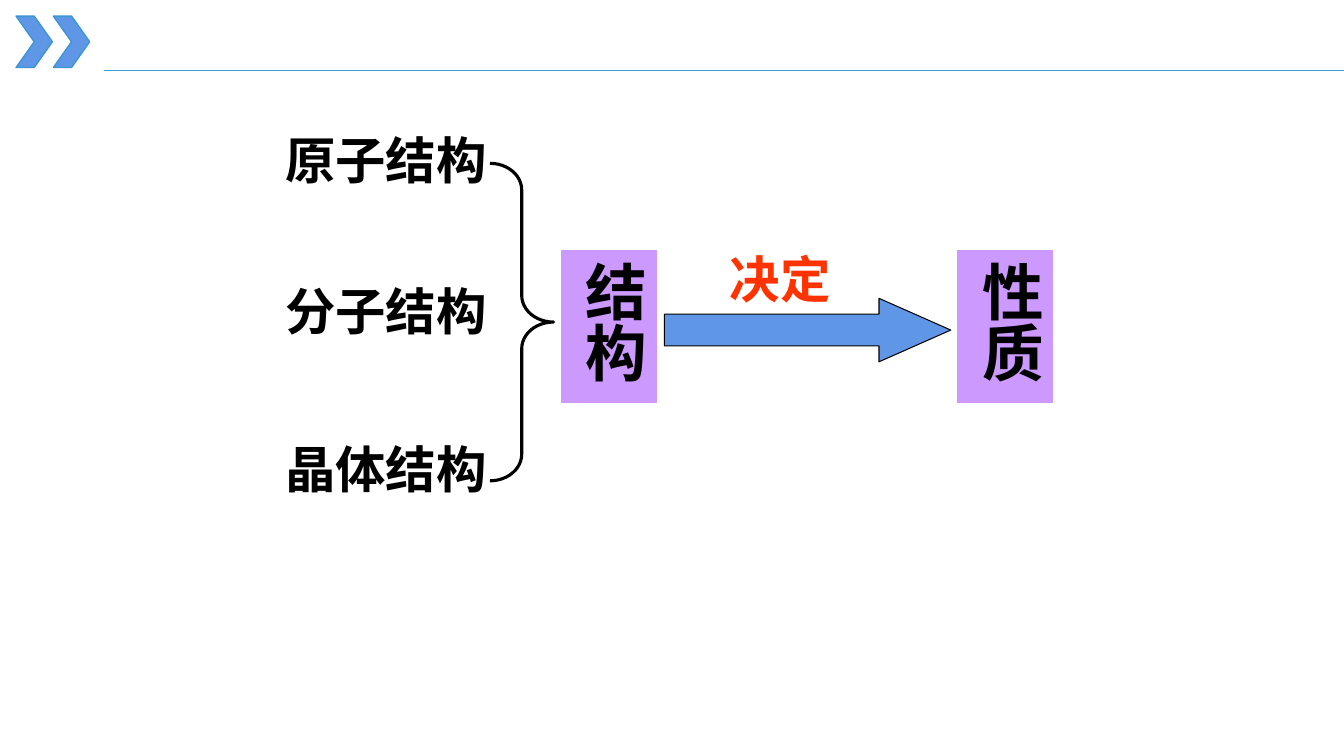
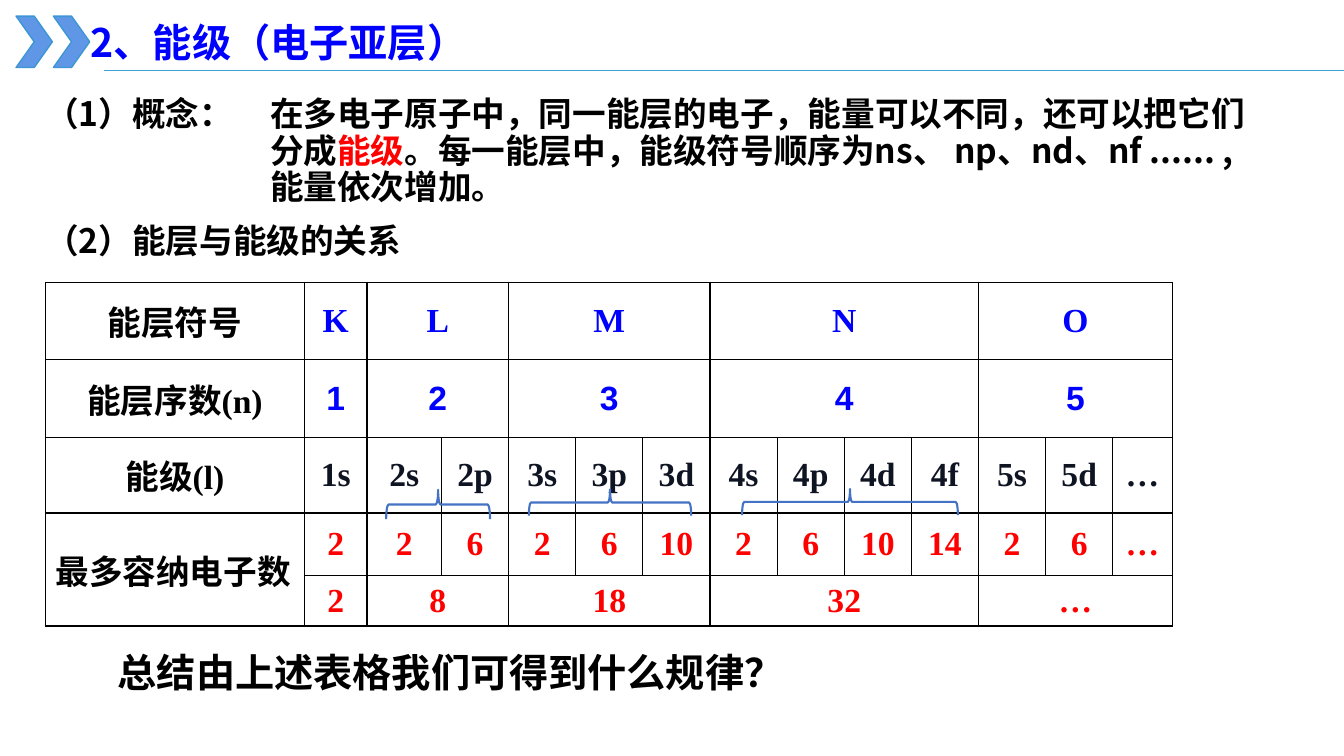
from dataclasses import dataclass

from lxml.etree import SubElement
from pptx import Presentation
from pptx.dml.color import RGBColor
from pptx.enum.shapes import MSO_CONNECTOR, MSO_SHAPE
from pptx.enum.text import MSO_ANCHOR, MSO_AUTO_SIZE, PP_ALIGN
from pptx.oxml.ns import qn
from pptx.util import Inches, Pt


@dataclass(frozen=True)
class Theme:
    black: str = "000000"
    blue: str = "0000FF"
    red: str = "FF0000"
    orange: str = "FF3300"
    navy: str = "0F1423"
    purple: str = "CC99FF"
    arrow: str = "6096E6"
    edge: str = "3B96D3"
    rule: str = "3DA1D2"
    brace: str = "4472C4"
    sans: str = "Arial"
    serif: str = "Times New Roman"
    hans: str = "Noto Sans CJK SC"
    kanji: str = "Noto Sans CJK JP"
    body: int = 24
    title: int = 28
    label: int = 36
    node: int = 44


THEME = Theme()


def rgb(color):
    return RGBColor.from_string(color)


def write(frame, content, size=THEME.body, color=THEME.black, face=THEME.hans,
          align=PP_ALIGN.LEFT, spacing=None):
    lines = [content] if isinstance(content, str) else content
    for index, line in enumerate(lines):
        para = frame.paragraphs[0] if index == 0 else frame.add_paragraph()
        para.alignment = align
        if spacing:
            para.line_spacing = spacing
        parts = [(line, {})] if isinstance(line, str) else line
        for words, style in parts:
            run = para.add_run()
            run.text = words
            font = run.font
            font.size = Pt(size)
            font.bold = True
            font.name = style.get("face", face)
            font.color.rgb = rgb(style.get("color", color))
            east = THEME.kanji if face == THEME.kanji else THEME.hans
            SubElement(font._element, qn("a:ea"), typeface=east)


def fit(frame, wrap=True):
    frame.word_wrap = wrap
    frame.vertical_anchor = MSO_ANCHOR.TOP
    frame.auto_size = MSO_AUTO_SIZE.SHAPE_TO_FIT_TEXT


def add_text(slide, box, content, wrap=True, **style):
    frame = slide.shapes.add_textbox(*map(Inches, box)).text_frame
    fit(frame, wrap)
    write(frame, content, **style)


def add_shape(slide, kind, box, line, width, fill=None, turn=0, adjust=()):
    shape = slide.shapes.add_shape(kind, *map(Inches, box))
    shape.shadow.inherit = False
    shape.rotation = turn
    for index, value in enumerate(adjust):
        shape.adjustments[index] = value
    if fill:
        shape.fill.solid()
        shape.fill.fore_color.rgb = rgb(fill)
    else:
        shape.fill.background()
    shape.line.color.rgb = rgb(line)
    shape.line.width = Pt(width)
    return shape


def add_node(slide, left, words):
    node = add_shape(slide, MSO_SHAPE.RECTANGLE, (left, 2.49, 0.94, 1.5),
                     THEME.purple, 0.75, fill=THEME.purple)
    frame = node.text_frame
    fit(frame)
    frame._txBody.bodyPr.set("vert", "eaVert")
    write(frame, words, size=THEME.node, face=THEME.sans)


def add_rule(slide):
    rule = slide.shapes.add_connector(
        MSO_CONNECTOR.STRAIGHT, Inches(1.03), Inches(0.7), Inches(13.33), Inches(0.7))
    rule.line.color.rgb = rgb(THEME.rule)
    rule.line.width = Pt(0.5)
    SubElement(rule._element.spPr, qn("a:effectLst"))
    return rule


def set_layout(layout, slide):
    for holder in list(layout.placeholders):
        if holder.placeholder_format.idx:
            holder._element.getparent().remove(holder._element)
        else:
            holder.left, holder.top = Inches(0.8), Inches(0.13)
            holder.width, holder.height = Inches(4.38), Inches(0.57)
    marks = [add_shape(slide, MSO_SHAPE.CHEVRON, (left, 0.16, 0.36, 0.51),
                       THEME.edge, 1, fill=THEME.arrow) for left in (0.16, 0.53)]
    for mark in marks + [add_rule(slide)]:
        layout.shapes._spTree.append(mark._element)


def set_cell(cell):
    props = cell._tc.get_or_add_tcPr()
    for side in ("lnL", "lnR", "lnT", "lnB"):
        line = SubElement(props, qn(f"a:{side}"), w=str(Pt(1)))
        fill = SubElement(line, qn("a:solidFill"))
        SubElement(fill, qn("a:srgbClr"), val=THEME.black)
    cell.fill.background()
    cell.vertical_anchor = MSO_ANCHOR.MIDDLE


def add_grid(slide):
    total, first, last = 11.18, [2.57, 0.62, 0.74], [0.59]
    widths = first + [(total - sum(first + last)) / 10] * 10 + last
    heights = [0.77, 0.77, 0.75, 0.62, 0.5]
    spans = [1, 2, 3, 4, 3]
    starts = [1 + sum(spans[:index]) for index in range(len(spans))]
    singles = range(1, len(widths))
    rows = [
        ("能层符号", "K L M N O", starts, THEME.blue, THEME.serif),
        ([[("能层序数", {"face": THEME.sans}), ("(n)", {})]],
         "1 2 3 4 5", starts, THEME.blue, THEME.sans),
        ("能级(l)", "1s 2s 2p 3s 3p 3d 4s 4p 4d 4f 5s 5d …", singles,
         THEME.navy, THEME.serif),
        ("最多容纳电子数", "2 2 6 2 6 10 2 6 10 14 2 6 …", singles,
         THEME.red, THEME.serif),
        (None, "2 8 18 32 …", starts, THEME.red, THEME.serif),
    ]
    table = slide.shapes.add_table(
        len(heights), len(widths), Inches(0.45), Inches(2.8),
        Inches(total), Inches(sum(heights))).table
    table.first_row = table.horz_banding = False
    for column, width in zip(table.columns, widths):
        column.width = Inches(width)
    for row, height in zip(table.rows, heights):
        row.height = Inches(height)
    for cell in table.iter_cells():
        set_cell(cell)
    table.cell(3, 0).merge(table.cell(4, 0))
    for index, (head, values, places, color, face) in enumerate(rows):
        if head:
            align = PP_ALIGN.LEFT if index == 3 else PP_ALIGN.CENTER
            write(table.cell(index, 0).text_frame, head, face=THEME.serif, align=align)
        if places is starts:
            for start, span in zip(starts, spans):
                if span > 1:
                    table.cell(index, start).merge(table.cell(index, start + span - 1))
        for place, value in zip(places, values.split()):
            write(table.cell(index, place).text_frame, value, color=color,
                  face=face, align=PP_ALIGN.CENTER)


def draw_cause(slide):
    for top, words in ((1.23, "原子结构"), (2.73, "分子结构"), (4.3, "晶体结构")):
        add_text(slide, (2.73, top, 2.6, 0.7), words, size=THEME.label, face=THEME.sans)
    add_shape(slide, MSO_SHAPE.RIGHT_BRACE, (4.86, 1.62, 0.63, 3.15),
              THEME.black, 2.25, adjust=(0.42, 0.5))
    add_node(slide, 5.57, "结构")
    add_node(slide, 9.5, "性质")
    add_shape(slide, MSO_SHAPE.RIGHT_ARROW, (6.59, 2.96, 2.84, 0.63),
              THEME.black, 0.75, fill=THEME.arrow, adjust=(0.5, 1.13))
    add_text(slide, (7.14, 2.41, 1.34, 0.7), "决定", size=THEME.label,
             color=THEME.orange, face=THEME.sans)


def draw_levels(slide):
    frame = slide.shapes.title.text_frame
    fit(frame)
    write(frame, "2、能级（电子亚层）", size=THEME.title, color=THEME.blue)
    add_text(slide, (2.58, 0.92, 10.75, 1.19), [
        "在多电子原子中，同一能层的电子，能量可以不同，还可以把它们",
        [("分成", {}), ("能级", {"color": THEME.red}),
         ("。每一能层中，能级符号顺序为ns、 np、nd、nf ...... ,", {})],
        "能量依次增加。",
    ], spacing=0.9)
    for top, width, words in ((0.87, 2.23, "（1）概念："),
                              (2.13, 3.93, "（2）能层与能级的关系")):
        add_text(slide, (0.35, top, width, 0.51), words, wrap=False)
    add_grid(slide)
    for box in ((4.2, 4.49, 0.29, 1.03), (5.92, 4.18, 0.26, 1.61), (8.3, 3.91, 0.26, 2.14)):
        add_shape(slide, MSO_SHAPE.LEFT_BRACE, box, THEME.brace, 1.5, turn=90,
                  adjust=(0.08, 0.5))
    add_text(slide, (1.07, 6.38, 6.88, 0.57), "总结由上述表格我们可得到什么规律？",
             wrap=False, size=THEME.title, face=THEME.kanji)


def main():
    deck = Presentation()
    deck.slide_width, deck.slide_height = Inches(13.33), Inches(7.5)
    layout = deck.slide_layouts[5]
    cause = deck.slides.add_slide(layout)
    set_layout(layout, cause)
    title = cause.shapes.title._element
    title.getparent().remove(title)
    draw_cause(cause)
    draw_levels(deck.slides.add_slide(layout))
    deck.save("out.pptx")


if __name__ == "__main__":
    main()
